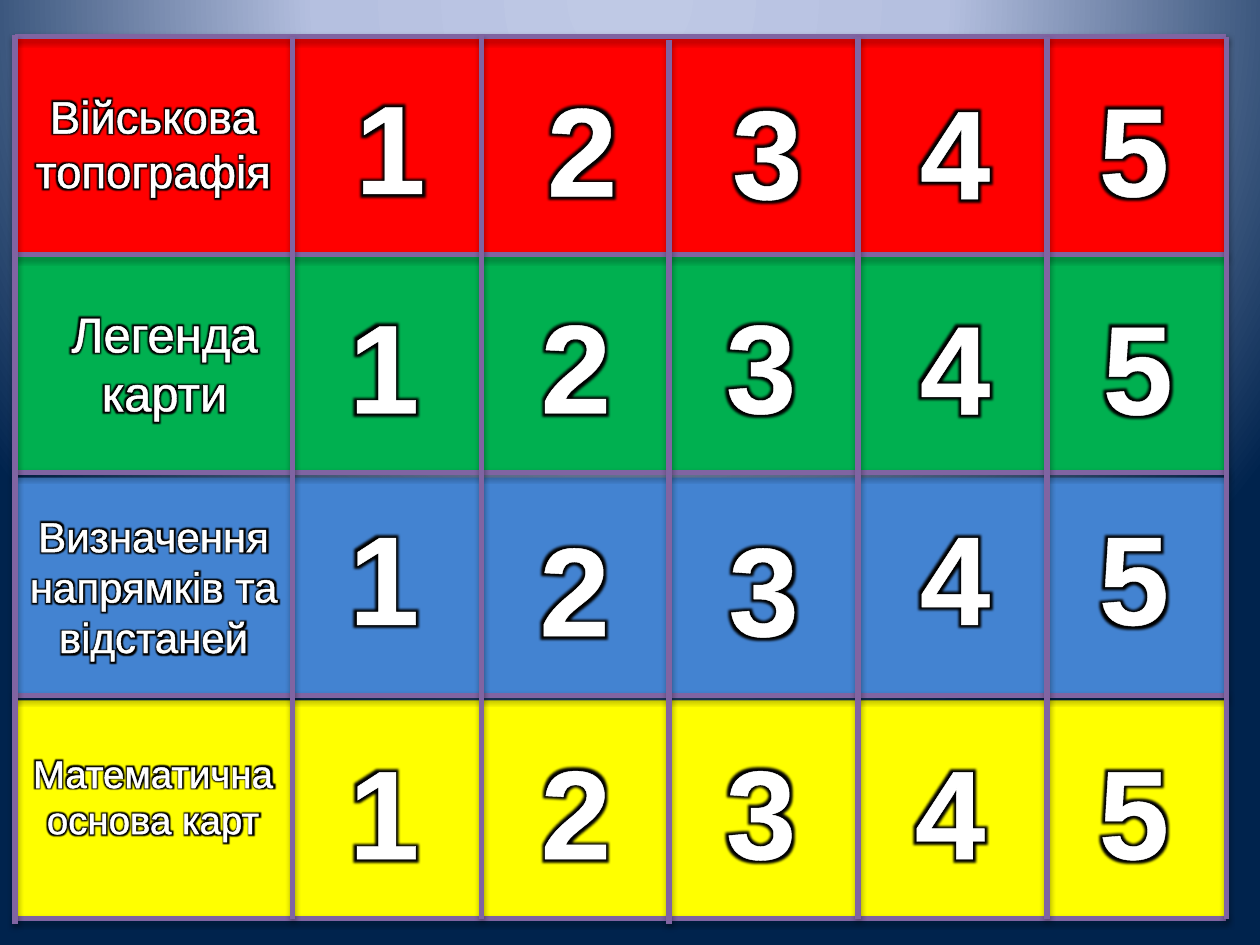
import pptx
import pptx.dml.color
import pptx.enum.shapes
import pptx.enum.text
import pptx.oxml
import pptx.oxml.ns
import pptx.util

Pt = pptx.util.Pt
RGBColor = pptx.dml.color.RGBColor
qn = pptx.oxml.ns.qn

WHITE = RGBColor(0xFF, 0xFF, 0xFF)
BLACK = RGBColor(0x00, 0x00, 0x00)
RED = RGBColor(0xFF, 0x00, 0x00)
GREEN = RGBColor(0x00, 0xB0, 0x50)
BLUE = RGBColor(0x43, 0x83, 0xD1)
YELLOW = RGBColor(0xFF, 0xFF, 0x00)
PURPLE = RGBColor(0x80, 0x64, 0xA2)
SKY = RGBColor(0xBF, 0xC9, 0xE5)
HAZE = RGBColor(0xB5, 0xC0, 0xE0)
NAVY = RGBColor(0x00, 0x23, 0x4D)

# Board geometry
LEFT, RIGHT, TOP, BOTTOM = 8.6, 700.8, 20.9, 524.9
BAND_HEIGHT = 124.6
RULES = [TOP, 145.4, 270, 397.4, BOTTOM]
# x, top and bottom of each upright
UPRIGHTS = [(LEFT, 20.2, 527.8), (167, TOP, BOTTOM), (275, 20.2, BOTTOM),
            (382.3, 23, 527.8), (490.3, TOP, BOTTOM), (598.3, TOP, BOTTOM),
            (RIGHT, TOP, BOTTOM)]

# Band colour and top; topic, size and box; left and top of numbers 1 to 5
TOPICS = [
    (RED, TOP, "Військова топографія", 26, (8.6, 46.8, 158.4, 70.6),
     [(195.8, 35.3), (305.3, 36.7), (411.1, 38.2), (518.4, 38.2), (620.6, 36.7)]),
    (GREEN, 145.4, "Легенда карти", 28, (20.9, 169.9, 146.2, 74.9),
     [(192.2, 160.6), (301.7, 160.6), (407.5, 160.6), (518.4, 161.3), (622.8, 161.3)]),
    (BLUE, 272.9, "Визначення напрямків та відстаней", 24, (8.6, 288, 158.4, 94.3),
     [(192.2, 281.5), (301, 288), (409, 288), (518.4, 281.5), (620.6, 281.5)]),
    (YELLOW, 400.3, "Математична основа карт", 22, (8.6, 424.8, 157.7, 60.5),
     [(192.2, 415.4), (301.7, 415.4), (407.5, 415.4), (515.5, 415.4), (620.6, 415.4)]),
]


def drawing(xml):
    """Parse a fragment in the DrawingML namespace."""
    name, rest = xml[1:].split(">", 1) if ">" in xml.split(" ")[0] else xml[1:].split(" ", 1)
    joint = ">" if xml[1 + len(name)] == ">" else " "
    return pptx.oxml.parse_xml(f"<{name} {pptx.oxml.ns.nsdecls('a')}{joint}{rest}")


class Board:
    font_name = "Arial"
    text_colour = WHITE
    line_colour = PURPLE
    line_width = 3

    def __init__(self, page):
        self.page = page

    def background(self, stops):
        self.page.background.fill.solid()
        solid = next(self.page.element.iter(qn("a:solidFill")))
        marks = "".join(f'<a:gs pos="{share * 1000}"><a:srgbClr val="{colour}"/></a:gs>'
                        for share, colour in stops)
        solid.getparent().replace(solid, drawing(
            f'<a:gradFill rotWithShape="1"><a:gsLst>{marks}</a:gsLst><a:path path="circle">'
            '<a:fillToRect l="50000" t="-80000" r="50000" b="180000"/>'
            '</a:path></a:gradFill>'))

    def band(self, top, colour):
        box = self.page.shapes.add_shape(
            pptx.enum.shapes.MSO_SHAPE.RECTANGLE,
            Pt(LEFT), Pt(top), Pt(RIGHT - LEFT), Pt(BAND_HEIGHT))
        box.shadow.inherit = False
        box.fill.solid()
        box.fill.fore_color.rgb = colour
        box.line.fill.background()

    def line(self, x1, y1, x2, y2):
        line = self.page.shapes.add_connector(
            pptx.enum.shapes.MSO_CONNECTOR.STRAIGHT, Pt(x1), Pt(y1), Pt(x2), Pt(y2))
        line.line.color.rgb = self.line_colour
        line.line.width = Pt(self.line_width)
        line.element.spPr.append(drawing(
            '<a:effectLst><a:outerShdw blurRad="40000" dist="23000" dir="5400000" '
            f'rotWithShape="0"><a:srgbClr val="{BLACK}"><a:alpha val="35000"/>'
            '</a:srgbClr></a:outerShdw></a:effectLst>'))

    def text(self, words, size, left, top, width, height, bold=False, wrap=True):
        box = self.page.shapes.add_textbox(Pt(left), Pt(top), Pt(width), Pt(height))
        frame = box.text_frame
        frame.word_wrap = wrap
        frame.auto_size = pptx.enum.text.MSO_AUTO_SIZE.SHAPE_TO_FIT_TEXT
        para = frame.paragraphs[0]
        para.alignment = pptx.enum.text.PP_ALIGN.CENTER
        span = para.add_run()
        span.text = words
        para.font.name = self.font_name
        para.font.size = Pt(size)
        para.font.bold = bold
        para.font.color.rgb = self.text_colour
        # White outline with a dark halo
        look = span.font._element
        look.append(drawing(f'<a:ln w="{Pt(1.45)}"><a:solidFill>'
                            f'<a:srgbClr val="{self.text_colour}"/></a:solidFill></a:ln>'))
        look.append(drawing(f'<a:effectLst><a:glow rad="{Pt(5)}">'
                            f'<a:srgbClr val="{BLACK}"/></a:glow></a:effectLst>'))


def main():
    deck = pptx.Presentation()
    deck.slide_width, deck.slide_height = Pt(720), Pt(540)
    board = Board(deck.slides.add_slide(deck.slide_layouts[6]))
    board.background([(0, SKY), (40, HAZE), (100, NAVY)])

    # Coloured bands
    for colour, top, *_ in TOPICS:
        board.band(top, colour)

    # Grid lines
    for y in RULES:
        board.line(LEFT, y, RIGHT, y)
    for x, top, bottom in UPRIGHTS:
        board.line(x, top, x, bottom)

    # Topics and question numbers
    for _, _, topic, size, place, numbers in TOPICS:
        board.text(topic, size, *place)
        for number, (left, top) in enumerate(numbers, start=1):
            board.text(str(number), 72, left, top, 54.7, 94.3, bold=True, wrap=False)

    deck.save("out.pptx")


if __name__ == "__main__":
    main()
